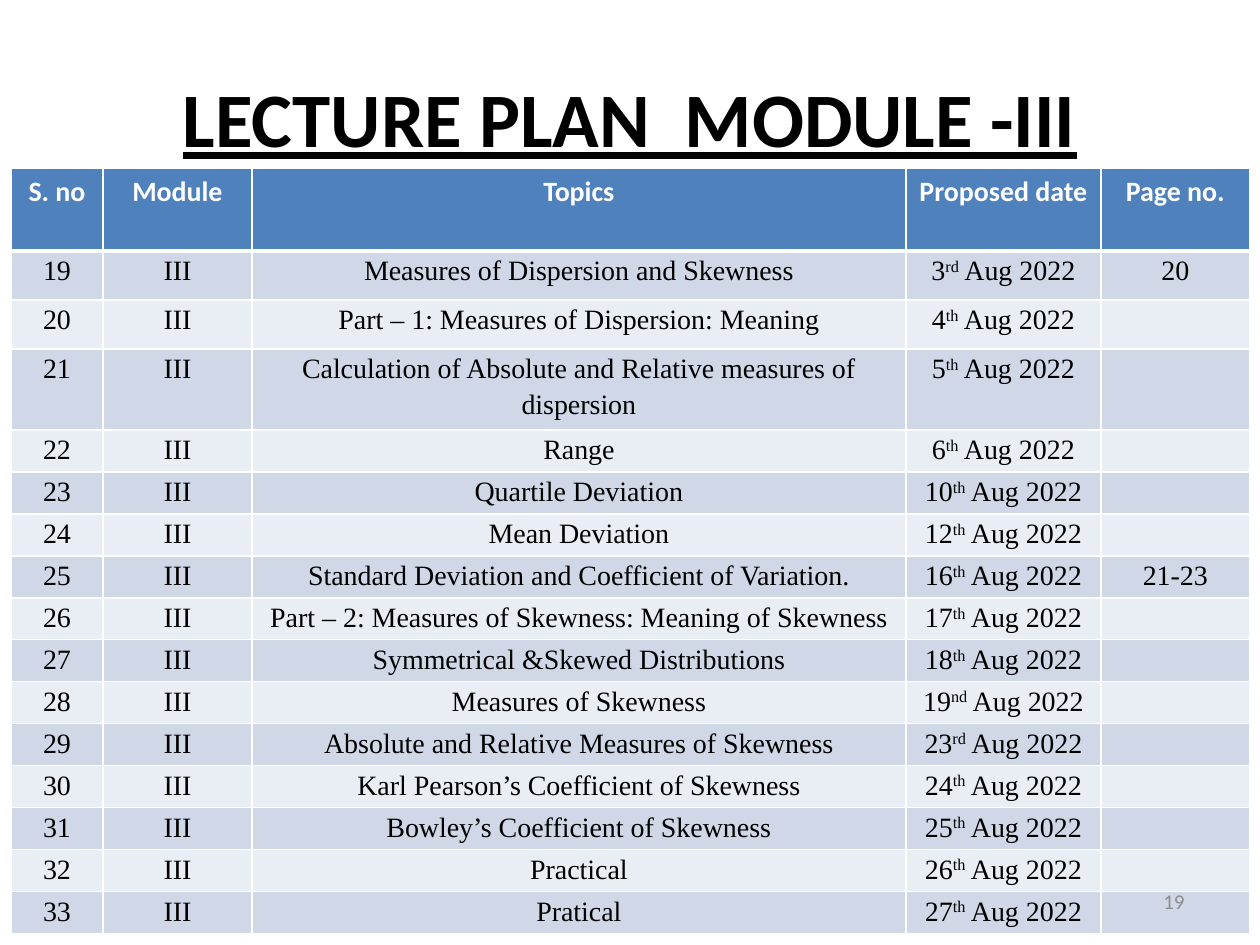
from lxml import etree
from pptx import Presentation
from pptx import util as u
from pptx.dml.color import RGBColor
from pptx.enum import text
from pptx.oxml import ns

COLORS = {
    "black": "000000", "white": "FFFFFF", "header": "4F81BD",
    "odd": "D0D8E8", "even": "E9EDF4", "number": "8C8C8C",
}
HEADINGS = ["S. no", "Module", "Topics", "Proposed date", "Page no."]
LECTURES = [
    ("Measures of Dispersion and Skewness", "3rd", "20"),
    ("Part – 1: Measures of Dispersion: Meaning", "4th", ""),
    ("Calculation of Absolute and Relative measures of dispersion", "5th", ""),
    ("Range", "6th", ""),
    ("Quartile Deviation", "10th", ""),
    ("Mean Deviation", "12th", ""),
    ("Standard Deviation and Coefficient of Variation.", "16th", "21-23"),
    ("Part – 2: Measures of Skewness: Meaning of Skewness", "17th", ""),
    ("Symmetrical &Skewed Distributions", "18th", ""),
    ("Measures of Skewness", "19nd", ""),
    ("Absolute and Relative Measures of Skewness", "23rd", ""),
    ("Karl Pearson’s Coefficient of Skewness", "24th", ""),
    ("Bowley’s Coefficient of Skewness", "25th", ""),
    ("Practical", "26th", ""),
    ("Pratical", "27th", ""),
]
FIRST_LECTURE = 19
SPACED_LECTURES = (19, 20, 25)
COLUMN_WIDTHS = [92, 149, 654, 195, 149]
ROW_HEIGHTS = [83, 49, 49, 81] + [42] * 12


def px(value):
    return u.Emu(round(value * 914400 / 126))


class SlideBuilder:
    """Draws styled elements on the current slide."""

    heading_font = "Calibri"
    body_font = "Times New Roman"

    def __init__(self, slide):
        self.slide = slide

    def format_runs(self, paragraph, font, size, color, bold=False, underline=False):
        for run in paragraph.runs:
            run.font.name = font
            run.font.size = u.Pt(size)
            run.font.bold = bold
            run.font.underline = underline
            run.font.color.rgb = RGBColor.from_string(COLORS[color])

    def label(self, box, words, size, color, align, **style):
        frame = self.slide.shapes.add_textbox(*map(px, box)).text_frame
        frame.word_wrap = True
        frame.vertical_anchor = text.MSO_ANCHOR.MIDDLE
        frame.text = words
        paragraph = frame.paragraphs[0]
        paragraph.alignment = align
        self.format_runs(paragraph, self.heading_font, size, color, **style)

    def table(self, left, top, widths, heights):
        box = map(px, (left, top, sum(widths), sum(heights)))
        table = self.slide.shapes.add_table(len(heights), len(widths), *box).table
        for column, width in zip(table.columns, widths):
            column.width = px(width)
        for row, height in zip(table.rows, heights):
            row.height = px(height)
        return table

    def borders(self, cell, top=1, bottom=1):
        properties = cell._tc.get_or_add_tcPr()
        edges = [("a:lnL", 1), ("a:lnR", 1), ("a:lnT", top), ("a:lnB", bottom)]
        for index, (tag, points) in enumerate(edges):
            line = etree.Element(ns.qn(tag), w=str(u.Pt(points)))
            fill = etree.SubElement(line, ns.qn("a:solidFill"))
            etree.SubElement(fill, ns.qn("a:srgbClr"), val=COLORS["white"])
            properties.insert(index, line)

    def fill(self, cell, color):
        cell.fill.solid()
        cell.fill.fore_color.rgb = RGBColor.from_string(COLORS[color])

    def header_cell(self, cell, words):
        self.fill(cell, "header")
        self.borders(cell, bottom=3)
        cell.text = words
        paragraph = cell.text_frame.paragraphs[0]
        paragraph.alignment = text.PP_ALIGN.CENTER
        self.format_runs(paragraph, self.heading_font, 16, "white", bold=True)

    def body_cell(self, cell, parts, color, top, spaced=False):
        self.fill(cell, color)
        self.borders(cell, top=top)
        cell.margin_left = cell.margin_right = px(9)
        cell.margin_top = cell.margin_bottom = 0
        paragraph = cell.text_frame.paragraphs[0]
        paragraph.alignment = text.PP_ALIGN.CENTER
        paragraph.line_spacing = 1.15
        if spaced:
            paragraph.space_before = paragraph.space_after = u.Pt(2.4)
        for part in filter(None, parts):
            paragraph.add_run().text = part
        self.format_runs(paragraph, self.body_font, 16, "black")
        if len(parts) == 3:
            paragraph.runs[1]._r.get_or_add_rPr().set("baseline", "30000")


def main():
    presentation = Presentation()
    presentation.slide_width, presentation.slide_height = px(1260), px(945)
    slide = presentation.slides.add_slide(presentation.slide_layouts[6])
    builder = SlideBuilder(slide)

    builder.label((63, 38, 1134, 158), "LECTURE PLAN  MODULE -III", 44, "black",
                  text.PP_ALIGN.CENTER, bold=True, underline=True)

    table = builder.table(11, 168, COLUMN_WIDTHS, ROW_HEIGHTS)
    for column, heading in enumerate(HEADINGS):
        builder.header_cell(table.cell(0, column), heading)
    for row, (topic, day, page) in enumerate(LECTURES, start=1):
        number = FIRST_LECTURE + row - 1
        date = [day[:-2], day[-2:], " Aug 2022"]
        for column, parts in enumerate([[str(number)], ["III"], [topic], date, [page]]):
            builder.body_cell(table.cell(row, column), parts,
                              "odd" if row % 2 else "even",
                              top=3 if row == 1 else 1,
                              spaced=column == 2 and number in SPACED_LECTURES)

    builder.label((903, 876, 294, 50), "19", 12, "number", text.PP_ALIGN.RIGHT)
    presentation.save("out.pptx")


if __name__ == "__main__":
    main()
